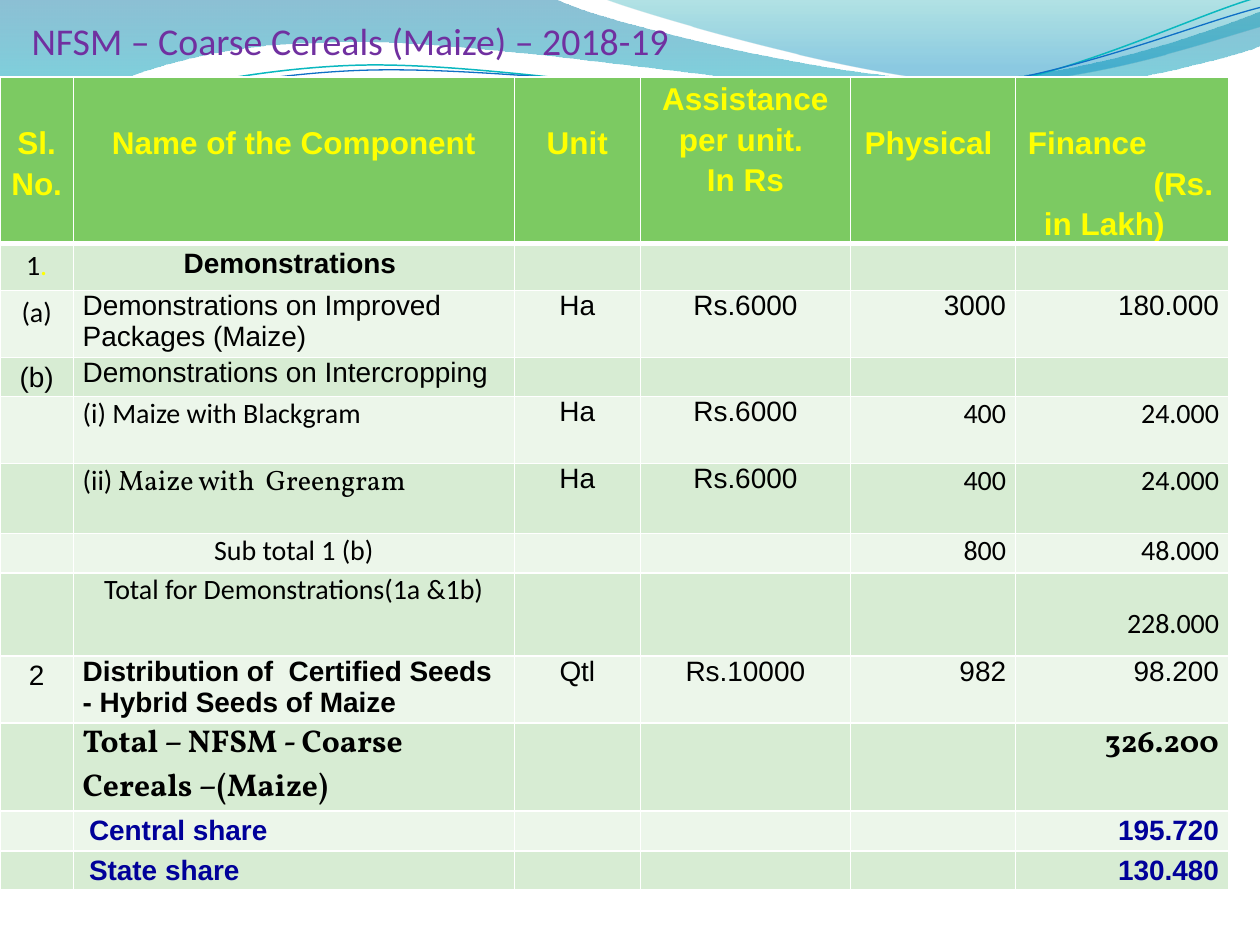
from dataclasses import dataclass
from math import cos, radians, sin

from pptx import Presentation
from pptx.dml.color import RGBColor
from pptx.enum.text import MSO_ANCHOR, MSO_AUTO_SIZE, PP_ALIGN
from pptx.oxml import parse_xml
from pptx.oxml.ns import qn
from pptx.util import Pt

LEFT, CENTER, RIGHT = PP_ALIGN.LEFT, PP_ALIGN.CENTER, PP_ALIGN.RIGHT
BOTTOM = MSO_ANCHOR.BOTTOM
NO_AUTOFIT = MSO_AUTO_SIZE.NONE
NAMESPACE = 'xmlns:a="http://schemas.openxmlformats.org/drawingml/2006/main"'


@dataclass(frozen=True)
class Theme:
    """Colours, fonts and type sizes of the slide."""
    title: str = "7030A0"
    header_text: str = "FFFF00"
    body_text: str = "000000"
    share_text: str = "000099"
    header_fill: str = "7CCA62"
    dark_band: str = "D7ECD3"
    light_band: str = "ECF6EA"
    border: str = "FFFFFF"
    teal_line: str = "0AB8BF"
    blue_line: str = "0F6FC6"
    sans: str = "Arial"
    plain: str = "Calibri"
    serif: str = "Vollkorn"
    title_size: float = 21.6
    large_size: int = 18
    body_size: int = 16


THEME = Theme()

WAVES = [
    dict(start=(0, -.01), stops=[(0, "0074A1", 45), (100, "00C6CF", 55)], segments=[
        [(4.4, -.01)], [(4.76, .17), (6.64, .63), (7.58, .63)],
        [(8.53, .63), (9.58, .26), (10, .09)], [(10.01, .36)],
        [(9.83, .44), (8.7, .76), (7.46, .75)],
        [(6.22, .75), (3.82, .28), (2.57, .34)],
        [(1.29, .35), (.46, .83), (-.01, 1.13)], [(0, -.01)]]),
    dict(start=(4.79, -.01), stops=[(0, "00A1A9", 30), (80, "008BBF", 45)], segments=[
        [(5.09, .11), (6.82, .62), (7.69, .65)],
        [(8.56, .69), (9.61, .32), (10, .21)], [(10, 0)], [(4.79, -.01)]]),
    dict(start=(0, 1.11), line=(THEME.teal_line, .85), center=(4.99, .58), segments=[
        [(.48, .93), (1.58, .57), (2.77, .52)],
        [(3.95, .47), (5.93, .89), (7.13, .8)],
        [(8.33, .71), (9.38, .15), (9.98, -.02)]]),
    dict(start=(0, 1.04), line=(THEME.blue_line, .75), center=(5, .59), segments=[
        [(.47, .96), (1.64, .61), (2.83, .56)],
        [(4.03, .51), (5.97, .83), (7.17, .75)],
        [(8.36, .67), (9.41, .21), (10, .06)]]),
]
LINE_TILT = 2.7

COLUMN_WIDTHS = [41.9, 252, 72, 120.1, 94.3, 121.7]
ROW_HEIGHTS = [95.1, 27, 38.2, 22.3, 38.3, 40, 22.6, 47.4, 38.3, 50.3, 22.8, 22.3]
COLUMN_ALIGNMENTS = [CENTER, LEFT, CENTER, CENTER, RIGHT, RIGHT]
CELL_MARGIN, HEADER_TOP, TOTAL_TOP = 5.4, 25, 19.5

PLAIN = dict(font=THEME.plain)
BOLD = dict(bold=True)
SPACED = dict(spacing=1.15)
GRAND_TOTAL = dict(font=THEME.serif, size=THEME.large_size, bold=True)
SHARE = dict(color=THEME.share_text, bold=True, spacing=1.15)
SHARE_NAME = dict(SHARE, indent=3.6)
HEADER = dict(color=THEME.header_text, size=THEME.large_size, bold=True, spacing=1.15, align=CENTER)

HEADERS = [
    [("Sl.No.", {})],
    [("Name of the Component", {})],
    [("Unit", {})],
    [("Assistance per unit. ", dict(top=0)), ("In Rs", dict(new_line=True, top=0))],
    [("Physical ", {})],
    [("Finance", dict(align=LEFT, indent=1.7)),
     ("(Rs.", dict(new_line=True, align=RIGHT, right_indent=3.4)),
     ("in Lakh)", dict(new_line=True, align=LEFT, indent=10.9))],
]
ROWS = [
    {0: [("1", PLAIN), (".", dict(font=THEME.plain, color=THEME.header_text))],
     1: [("Demonstrations ", dict(bold=True, align=CENTER, spacing=1.15))]},
    {0: [("(a)", PLAIN)], 1: "Demonstrations on Improved Packages (Maize)",
     2: "Ha", 3: "Rs.6000", 4: "3000", 5: "180.000"},
    {0: "(b)", 1: "Demonstrations on Intercropping"},
    {1: [("(i) Maize with Blackgram", PLAIN)], 2: "Ha", 3: "Rs.6000",
     4: [("400", PLAIN)], 5: [("24.000", PLAIN)]},
    {1: [("(ii)", PLAIN), (" Maize with  Greengram", dict(font=THEME.serif))],
     2: "Ha", 3: "Rs.6000", 4: [("400", PLAIN)], 5: [("24.000", PLAIN)]},
    {1: [("Sub total 1 (b)", dict(PLAIN, align=CENTER))],
     4: [("800", PLAIN)], 5: [("48.000", PLAIN)]},
    {1: [("Total for Demonstrations(1a &1b)", dict(PLAIN, align=CENTER))],
     5: [("228.000", dict(PLAIN, top=TOTAL_TOP))]},
    {0: "2", 1: [("Distribution of  Certified Seeds - Hybrid Seeds of Maize", BOLD)],
     2: "Qtl", 3: "Rs.10000", 4: "982", 5: "98.200"},
    {1: [("Total – NFSM - Coarse Cereals –(Maize)", GRAND_TOTAL)], 5: [("326.200", GRAND_TOTAL)]},
    {1: [("Central share", SHARE_NAME)], 5: [("195.720", SHARE)]},
    {1: [("State share", SHARE_NAME)], 5: [("130.480", SHARE)]},
]


def write_text(frame, text, *, font=THEME.sans, size=THEME.body_size, color=THEME.body_text,
               bold=False, align=LEFT, spacing=1.0, indent=0, right_indent=0, new_line=False):
    """Append a formatted run to the last paragraph or to a new one."""
    paragraph = frame.add_paragraph() if new_line else frame.paragraphs[-1]
    paragraph.alignment = align
    paragraph.line_spacing = spacing
    for name, length in (("marL", indent), ("marR", right_indent)):
        if length:
            paragraph._p.get_or_add_pPr().set(name, str(Pt(length)))
    run = paragraph.add_run()
    run.text = text
    run.font.name = font
    run.font.size = Pt(size)
    run.font.bold = bold
    run.font.color.rgb = RGBColor.from_string(color)


def turn(point, center, degrees):
    """Rotate a point clockwise about a center."""
    x, y = point[0] - center[0], point[1] - center[1]
    c, s = cos(radians(degrees)), sin(radians(degrees))
    return center[0] + x * c - y * s, center[1] + x * s + y * c


def add_curve(slide, start, segments, closed):
    """Add a freeform whose three-point segments are cubic curves."""
    builder = slide.shapes.build_freeform(*start)
    builder.add_line_segments([segment[-1] for segment in segments], close=closed)
    shape = builder.convert_to_shape()
    shape.shadow.inherit = False
    outline = shape._element.spPr.find(".//" + qn("a:path"))
    for line, segment in zip(outline.findall(qn("a:lnTo")), segments):
        if len(segment) == 3:
            points = "".join(f'<a:pt x="{x - shape.left}" y="{y - shape.top}"/>' for x, y in segment)
            outline.replace(line, parse_xml(f"<a:cubicBezTo {NAMESPACE}>{points}</a:cubicBezTo>"))
    return shape


def set_gradient(shape, stops):
    """Fill a shape with a translucent gradient from top to bottom."""
    entries = "".join(
        f'<a:gs pos="{position * 1000}"><a:srgbClr val="{color}">'
        f'<a:alpha val="{alpha * 1000}"/></a:srgbClr></a:gs>' for position, color, alpha in stops)
    shape._element.spPr.find(qn("a:custGeom")).addnext(parse_xml(
        f'<a:gradFill {NAMESPACE} rotWithShape="1"><a:gsLst>{entries}</a:gsLst>'
        '<a:lin ang="5400000" scaled="0"/></a:gradFill>'))


def add_waves(slide, left, top, unit):
    """Draw the banner waves from a corner, with unit points to each step."""
    for wave in WAVES:
        center = wave.get("center", (0, 0))
        tilt = LINE_TILT if "line" in wave else 0
        start, *segments = [
            [(Pt(left + x * unit), Pt(top + y * unit))
             for x, y in (turn(point, center, tilt) for point in segment)]
            for segment in [[wave["start"]], *wave["segments"]]]
        shape = add_curve(slide, start[0], segments, not tilt)
        if tilt:
            middle = Pt(left + center[0] * unit), Pt(top + center[1] * unit)
            box = shape.left + shape.width / 2, shape.top + shape.height / 2
            x, y = turn(box, middle, -tilt)
            shape.left, shape.top = int(x - shape.width / 2), int(y - shape.height / 2)
            shape.rotation = -tilt
            color, width = wave["line"]
            shape.fill.background()
            shape.line.color.rgb = RGBColor.from_string(color)
            shape.line.width = Pt(width)
        else:
            set_gradient(shape, wave["stops"])
            shape.line.fill.background()


def add_title(slide, left, top, width, height):
    """Place the title placeholder above the waves and fill it."""
    title = slide.shapes.title
    slide.shapes._spTree.append(title._element)
    title.left, title.top, title.width, title.height = map(Pt, (left, top, width, height))
    frame = title.text_frame
    frame.auto_size = NO_AUTOFIT
    frame.vertical_anchor = BOTTOM
    frame.margin_left = frame.margin_right = frame.margin_bottom = 0
    write_text(frame, "NFSM – Coarse Cereals (Maize) – 2018-19",
               font=THEME.plain, size=THEME.title_size, color=THEME.title)


def fill_cell(cell, parts, fill, base, top_border=1, bottom_border=1):
    """Colour and border a cell and write its parts over the base format."""
    cell.fill.solid()
    cell.fill.fore_color.rgb = RGBColor.from_string(fill)
    borders = [("lnL", 1), ("lnR", 1), ("lnT", top_border), ("lnB", bottom_border)]
    for position, (side, width) in enumerate(borders):
        cell._tc.get_or_add_tcPr().insert(position, parse_xml(
            f'<a:{side} {NAMESPACE} w="{Pt(width)}"><a:solidFill>'
            f'<a:srgbClr val="{THEME.border}"/></a:solidFill></a:{side}>'))
    if isinstance(parts, str):
        parts = [(parts, {})]
    formats = [{**base, **own} for _, own in parts]
    tops = [entry.pop("top", 0) for entry in formats]
    cell.margin_left = cell.margin_right = Pt(CELL_MARGIN)
    cell.margin_top, cell.margin_bottom = Pt(max(tops, default=0)), 0
    for (text, _), entry in zip(parts, formats):
        write_text(cell.text_frame, text, **entry)


def add_component_table(slide, left, top):
    """Build the table of components, units and finance."""
    table = slide.shapes.add_table(
        len(ROW_HEIGHTS), len(COLUMN_WIDTHS), Pt(left), Pt(top),
        Pt(sum(COLUMN_WIDTHS)), Pt(sum(ROW_HEIGHTS))).table
    for column, width in zip(table.columns, COLUMN_WIDTHS):
        column.width = Pt(width)
    for row, height in zip(table.rows, ROW_HEIGHTS):
        row.height = Pt(height)
    for index, parts in enumerate(HEADERS):
        fill_cell(table.cell(0, index), parts, THEME.header_fill,
                  dict(HEADER, top=HEADER_TOP), bottom_border=3)
    for number, row in enumerate(ROWS, 1):
        fill = THEME.dark_band if number % 2 else THEME.light_band
        for index, align in enumerate(COLUMN_ALIGNMENTS):
            base = dict(align=align, **(SPACED if index == 0 else {}))
            fill_cell(table.cell(number, index), row.get(index, []), fill, base,
                      top_border=3 if number == 1 else 1)


def main():
    """Build the slide and save it."""
    presentation = Presentation()
    presentation.slide_width, presentation.slide_height = Pt(720), Pt(540)
    slide = presentation.slides.add_slide(presentation.slide_layouts[5])
    add_waves(slide, 0, 0, 72)
    add_title(slide, 18, 12, 690, 24)
    add_component_table(slide, 0, 44)
    presentation.save("out.pptx")


if __name__ == "__main__":
    main()
